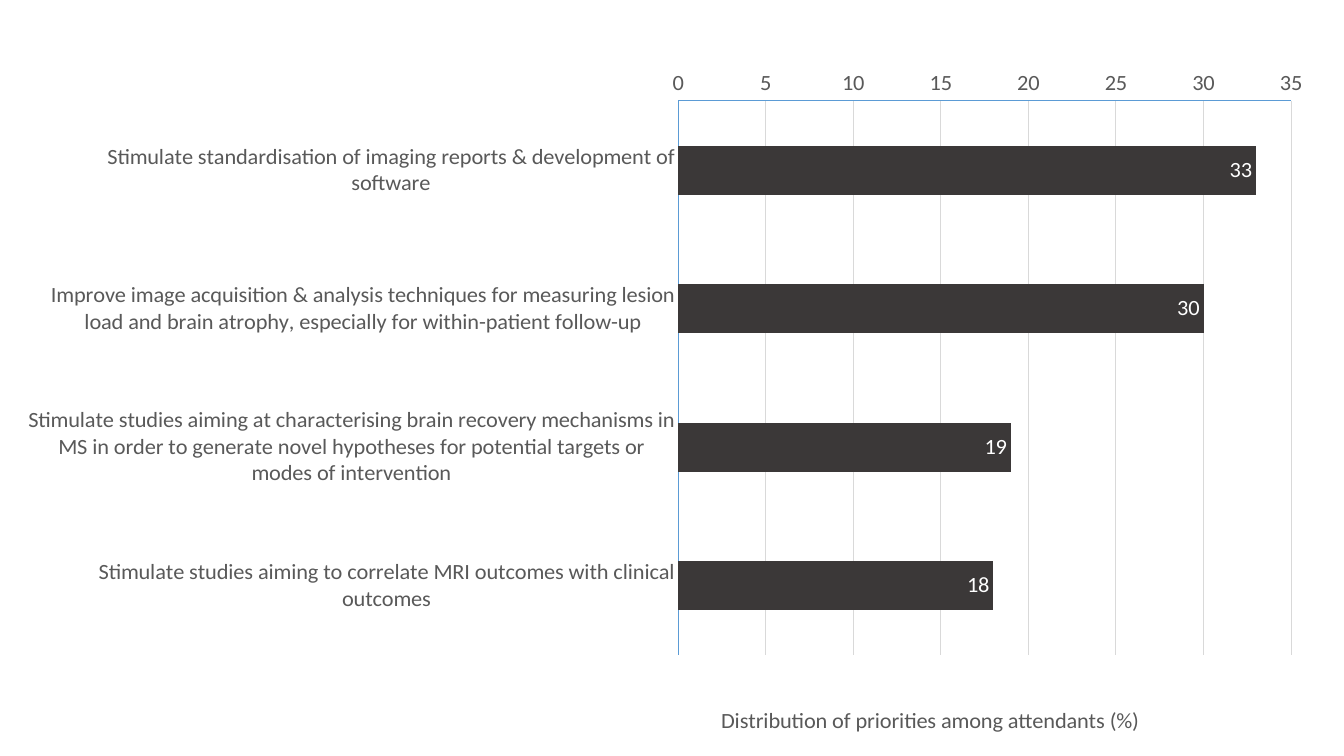
"""Build a slide with a bar chart of priorities among attendants."""
import pptx
import pptx.chart.data
import pptx.dml.color
import pptx.enum.chart
import pptx.oxml
import pptx.oxml.ns
import pptx.util

Pt = pptx.util.Pt

FONT = "Calibri"
TEXT_SIZE = 16
TEXT_COLOR = "595959"
AXIS_COLOR = "5B9BD5"
GRID_COLOR = "D9D9D9"
BAR_COLOR = "3B3838"
LABEL_COLOR = "FFFFFF"

AXIS_TITLE = "Distribution of priorities among attendants (%)"
PRIORITIES = [
    ("Stimulate standardisation of imaging reports & development of software", 33),
    ("Improve image acquisition & analysis techniques for measuring lesion load "
     "and brain atrophy, especially for within-patient follow-up", 30),
    ("Stimulate studies aiming at characterising brain recovery mechanisms in MS "
     "in order to generate novel hypotheses for potential targets or modes of "
     "intervention", 19),
    ("Stimulate studies aiming to correlate MRI outcomes with clinical outcomes", 18),
]

CHART_BOX = (20.2, 50.4, 928, 478.8)
PLOT_LAYOUT = {"layoutTarget": "inner", "xMode": "edge", "yMode": "edge",
               "x": 0.5, "y": 0.028, "w": 0.472, "h": 0.851}
TITLE_LAYOUT = {"xMode": "edge", "yMode": "edge", "x": 0.53, "y": 0.95}


def color(value):
    return pptx.dml.color.RGBColor.from_string(value)


def style_font(font, size, value):
    font.name = FONT
    font.size = Pt(size)
    font.bold = False
    font.color.rgb = color(value)


def style_line(line, value):
    line.width = Pt(0.75)
    line.color.rgb = color(value)


def set_layout(parent, settings):
    layout = parent.find(pptx.oxml.ns.qn("c:layout"))
    if layout is not None:
        index = parent.index(layout)
        parent.remove(layout)
    else:
        index = 0
    items = "".join(f'<c:{name} val="{value}"/>' for name, value in settings.items())
    parent.insert(index, pptx.oxml.parse_xml(
        f'<c:layout {pptx.oxml.ns.nsdecls("c")}>'
        f"<c:manualLayout>{items}</c:manualLayout></c:layout>"))


def style_axis(axis):
    axis.major_tick_mark = pptx.enum.chart.XL_TICK_MARK.NONE
    axis.minor_tick_mark = pptx.enum.chart.XL_TICK_MARK.NONE
    style_font(axis.tick_labels.font, TEXT_SIZE, TEXT_COLOR)
    style_line(axis.format.line, AXIS_COLOR)


def add_priority_chart(page):
    data = pptx.chart.data.CategoryChartData()
    data.categories = [name for name, share in PRIORITIES]
    data.add_series("Series 1", [share for name, share in PRIORITIES])
    chart = page.shapes.add_chart(
        pptx.enum.chart.XL_CHART_TYPE.BAR_CLUSTERED, *map(Pt, CHART_BOX), data).chart
    chart.has_title = False
    chart.has_legend = False
    style_font(chart.font, 10, "000000")

    plot = chart.plots[0]
    plot.gap_width = 182
    plot.vary_by_categories = False
    fill = plot.series[0].format.fill
    fill.solid()
    fill.fore_color.rgb = color(BAR_COLOR)
    labels = plot.series[0].data_labels
    labels.show_value = True
    labels.position = pptx.enum.chart.XL_LABEL_POSITION.INSIDE_END
    style_font(labels.font, TEXT_SIZE, LABEL_COLOR)

    categories, values = chart.category_axis, chart.value_axis
    style_axis(categories)
    style_axis(values)
    categories.reverse_order = True
    categories.crosses = pptx.enum.chart.XL_AXIS_CROSSES.MAXIMUM
    values.minimum_scale = 0
    values.maximum_scale = 35
    values.major_unit = 5
    values.has_major_gridlines = True
    style_line(values.major_gridlines.format.line, GRID_COLOR)

    title = values.axis_title
    span = title.text_frame.paragraphs[0].add_run()
    span.text = AXIS_TITLE
    style_font(span.font, TEXT_SIZE, TEXT_COLOR)
    set_layout(title._element, TITLE_LAYOUT)
    set_layout(chart._chartSpace.xpath("c:chart/c:plotArea")[0], PLOT_LAYOUT)


def main():
    deck = pptx.Presentation()
    deck.slide_width = Pt(960)
    deck.slide_height = Pt(540)
    page = deck.slides.add_slide(deck.slide_layouts[6])
    add_priority_chart(page)
    deck.save("out.pptx")


if __name__ == "__main__":
    main()
